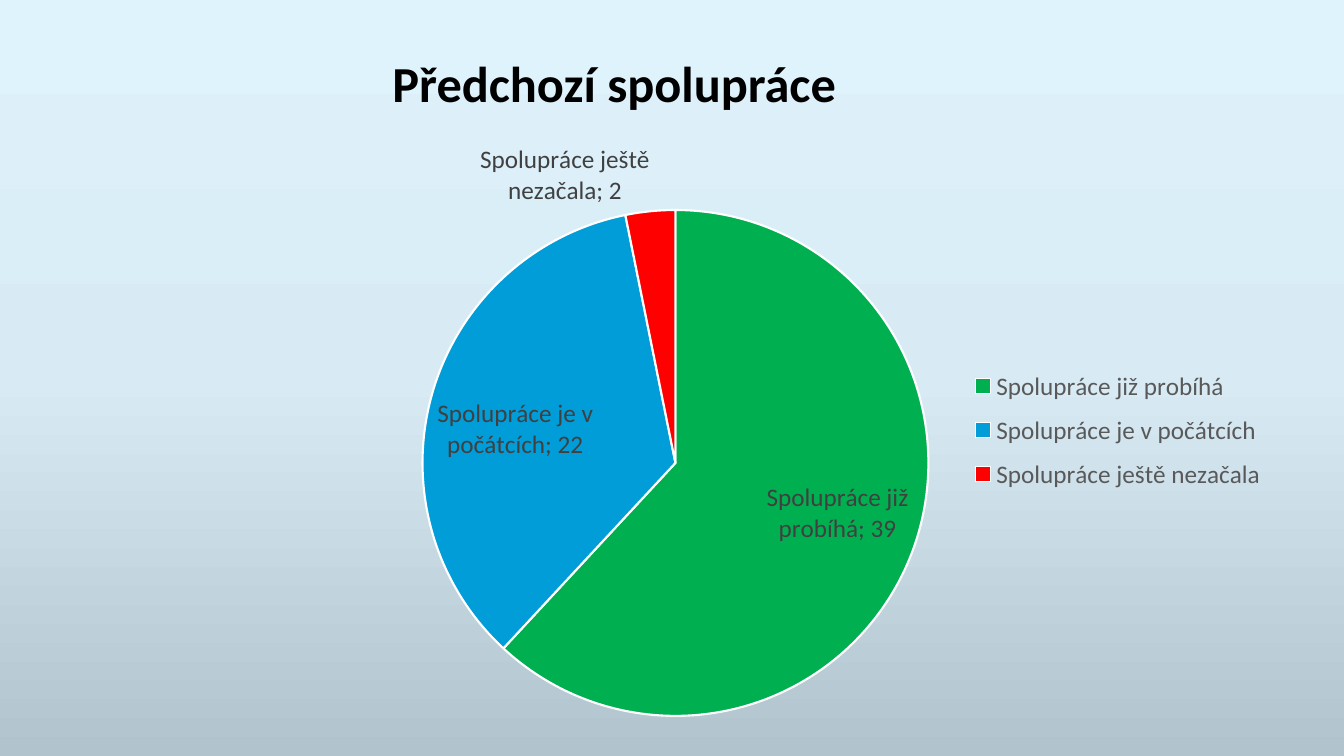
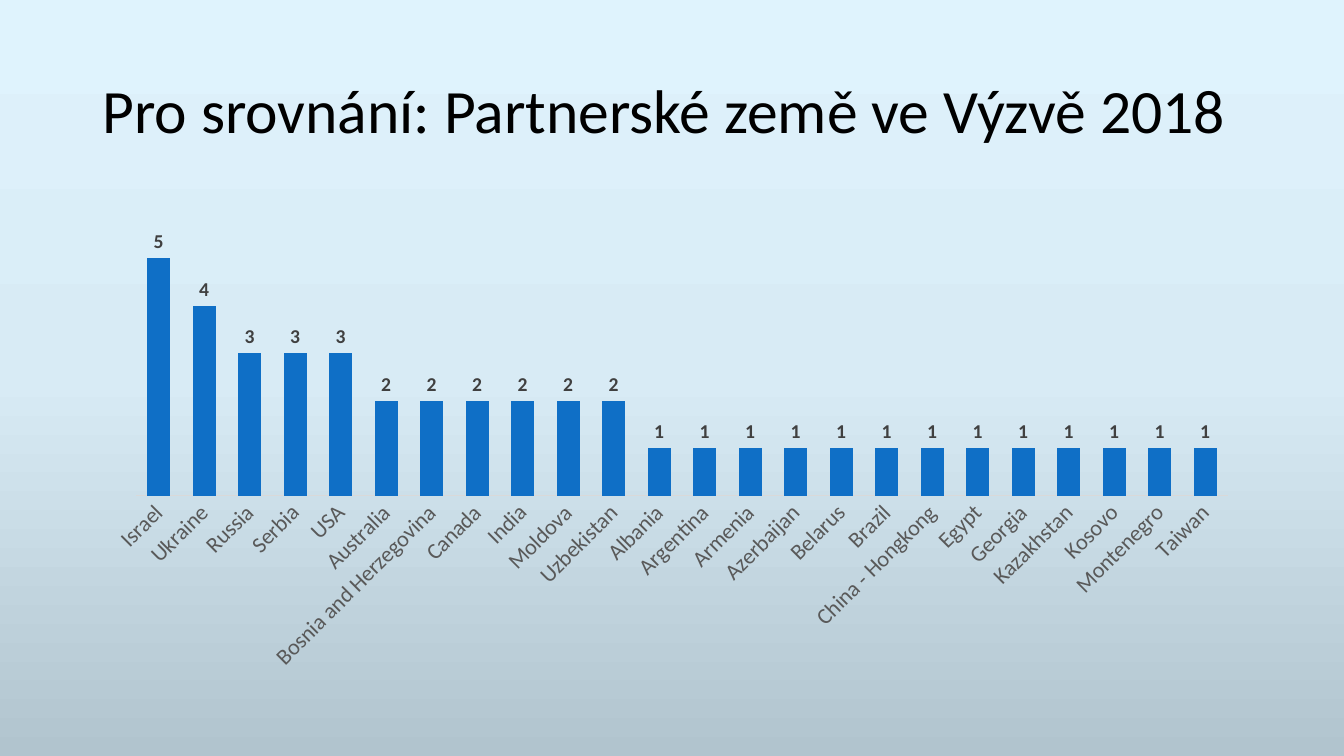
import pptx
import pptx.chart.data
import pptx.dml.color
import pptx.enum.chart
import pptx.enum.text
import pptx.oxml
import pptx.oxml.ns
import pptx.util

H = 7.5
W = H * 16 / 9
FONT = "Calibri"
COLORS = {
    "text": "000000", "label": "404040", "muted": "595959", "axis": "D9D9D9",
    "white": "FFFFFF", "bar": "0F6FC6",
    "running": "00B050", "starting": "009DD9", "waiting": "FF0000",
    "sky_top": "DFF3FD", "sky_middle": "D8EBF5", "sky_bottom": "B1C4CE",
}
SKY = [(0, "sky_top"), (50, "sky_middle"), (100, "sky_bottom")]
COOPERATION = [
    ("Spolupráce již probíhá", 39, "running"),
    ("Spolupráce je v počátcích", 22, "starting"),
    ("Spolupráce ještě nezačala", 2, "waiting"),
]
COUNTRIES = [
    (5, ["Israel"]),
    (4, ["Ukraine"]),
    (3, ["Russia", "Serbia", "USA"]),
    (2, ["Australia", "Bosnia and Herzegovina", "Canada", "India", "Moldova",
         "Uzbekistan"]),
    (1, ["Albania", "Argentina", "Armenia", "Azerbaijan", "Belarus", "Brazil",
         "China - Hongkong", "Egypt", "Georgia", "Kazakhstan", "Kosovo",
         "Montenegro", "Taiwan"]),
]
CT = pptx.enum.chart


def rgb(name):
    return pptx.dml.color.RGBColor.from_string(COLORS[name])


def place(percent_box):
    return [pptx.util.Inches(share * side / 100)
            for share, side in zip(percent_box, (W, H, W, H))]


def set_font(font, size, color, bold=False):
    font.name = FONT
    font.size = pptx.util.Pt(size)
    font.bold = bold
    font.color.rgb = rgb(color)


def set_fill(fill, color):
    fill.solid()
    fill.fore_color.rgb = rgb(color)


def add_slide(prs):
    s = prs.slides.add_slide(prs.slide_layouts[6])
    fill = s.background.fill
    fill.gradient()
    grad = s.background._cSld.find(".//" + pptx.oxml.ns.qn("a:gradFill"))
    for child in list(grad):
        grad.remove(child)
    stops = "".join(
        f'<a:gs pos="{pos * 1000}"><a:srgbClr val="{COLORS[name]}"/></a:gs>'
        for pos, name in SKY)
    ns = pptx.oxml.ns.nsdecls("a")
    grad.append(pptx.oxml.parse_xml(f"<a:gsLst {ns}>{stops}</a:gsLst>"))
    grad.append(pptx.oxml.parse_xml(f'<a:lin {ns} ang="5400000" scaled="0"/>'))
    return s


def add_title(s, box, text, size, bold=False):
    tf = s.shapes.add_textbox(*place(box)).text_frame
    tf.word_wrap = True
    tf.vertical_anchor = pptx.enum.text.MSO_ANCHOR.MIDDLE
    p = tf.paragraphs[0]
    p.line_spacing = 0.9
    r = p.add_run()
    r.text = text
    set_font(r.font, size, "text", bold)


def set_layout(parent, index, percent_box, inner=False):
    for old in parent.findall(pptx.oxml.ns.qn("c:layout")):
        parent.remove(old)
    target = '<c:layoutTarget val="inner"/>' if inner else ""
    modes = '<c:xMode val="edge"/><c:yMode val="edge"/>'
    sizes = "".join(f'<c:{side} val="{share / 100:.4f}"/>'
                    for side, share in zip("xywh", percent_box))
    parent.insert(index, pptx.oxml.parse_xml(
        f'<c:layout {pptx.oxml.ns.nsdecls("c")}><c:manualLayout>'
        f"{target}{modes}{sizes}</c:manualLayout></c:layout>"))


def add_chart(s, box, kind, categories, values, plot_box):
    data = pptx.chart.data.CategoryChartData()
    data.categories = categories
    data.add_series("Series 1", values)
    chart = s.shapes.add_chart(kind, *place(box), data).chart
    chart.has_title = False
    chart.has_legend = False
    set_font(chart.font, 10, "text")
    set_layout(chart._chartSpace.chart.plotArea, 0, plot_box, inner=True)
    return chart


def add_labels(series, size, position, bold=False):
    labels = series.data_labels
    labels.show_value = True
    labels.position = position
    set_font(labels.font, size, "label", bold)
    return labels


def add_cooperation_pie(s, box):
    names, values, colors = zip(*COOPERATION)
    chart = add_chart(s, box, CT.XL_CHART_TYPE.PIE, names, values,
                      (31.26, 13.34, 38.82, 84.36))
    chart.plots[0].vary_by_categories = True
    series = chart.plots[0].series[0]
    for i, color in enumerate(colors):
        fmt = series.points[i].format
        set_fill(fmt.fill, color)
        fmt.line.color.rgb = rgb("white")
        fmt.line.width = pptx.util.Pt(1.5)
    labels = add_labels(series, 18, CT.XL_LABEL_POSITION.BEST_FIT)
    labels.show_category_name = True
    separator = pptx.oxml.parse_xml(
        f'<c:separator {pptx.oxml.ns.nsdecls("c")}>; </c:separator>')
    labels._element.find(pptx.oxml.ns.qn("c:showBubbleSize")).addnext(separator)
    chart.has_legend = True
    legend = chart.legend
    legend.position = CT.XL_LEGEND_POSITION.RIGHT
    legend.include_in_layout = True
    set_font(legend.font, 18, "muted")
    set_layout(legend._element, 1, (72.62, 37.9, 24, 24.3))


def add_country_columns(s, box):
    names = [name for _, group in COUNTRIES for name in group]
    values = [count for count, group in COUNTRIES for _ in group]
    chart = add_chart(s, box, CT.XL_CHART_TYPE.COLUMN_CLUSTERED, names, values,
                      (3.76, 1.86, 94.2, 59.44))
    plot = chart.plots[0]
    plot.vary_by_categories = False
    plot.gap_width = 100
    set_fill(plot.series[0].format.fill, "bar")
    add_labels(plot.series[0], 14, CT.XL_LABEL_POSITION.OUTSIDE_END, bold=True)
    value_axis = chart.value_axis
    value_axis.minimum_scale, value_axis.maximum_scale = 0, 6
    value_axis.has_major_gridlines = False
    value_axis.visible = False
    axis = chart.category_axis
    axis.major_tick_mark = CT.XL_TICK_MARK.NONE
    axis.format.line.color.rgb = rgb("axis")
    axis.format.line.width = pptx.util.Pt(0.75)
    set_font(axis.tick_labels.font, 16, "muted")
    body = axis._element.find(".//" + pptx.oxml.ns.qn("a:bodyPr"))
    body.set("rot", "-2700000")
    body.set("vert", "horz")


def build_cooperation(prs):
    s = add_slide(prs)
    add_title(s, (28.46, 3.8, 47.56, 15.2), "Předchozí spolupráce", 36, bold=True)
    add_cooperation_pie(s, (1.12, 17.2, 96.98, 79.33))


def build_countries(prs):
    s = add_slide(prs)
    add_title(s, (6.88, 5.33, 86.25, 19.33),
              "Pro srovnání: Partnerské země ve Výzvě 2018", 44)
    add_country_columns(s, (6.88, 26.67, 86.25, 63.47))


def main():
    prs = pptx.Presentation()
    prs.slide_width = pptx.util.Inches(W)
    prs.slide_height = pptx.util.Inches(H)
    build_cooperation(prs)
    build_countries(prs)
    prs.save("out.pptx")


if __name__ == "__main__":
    main()
